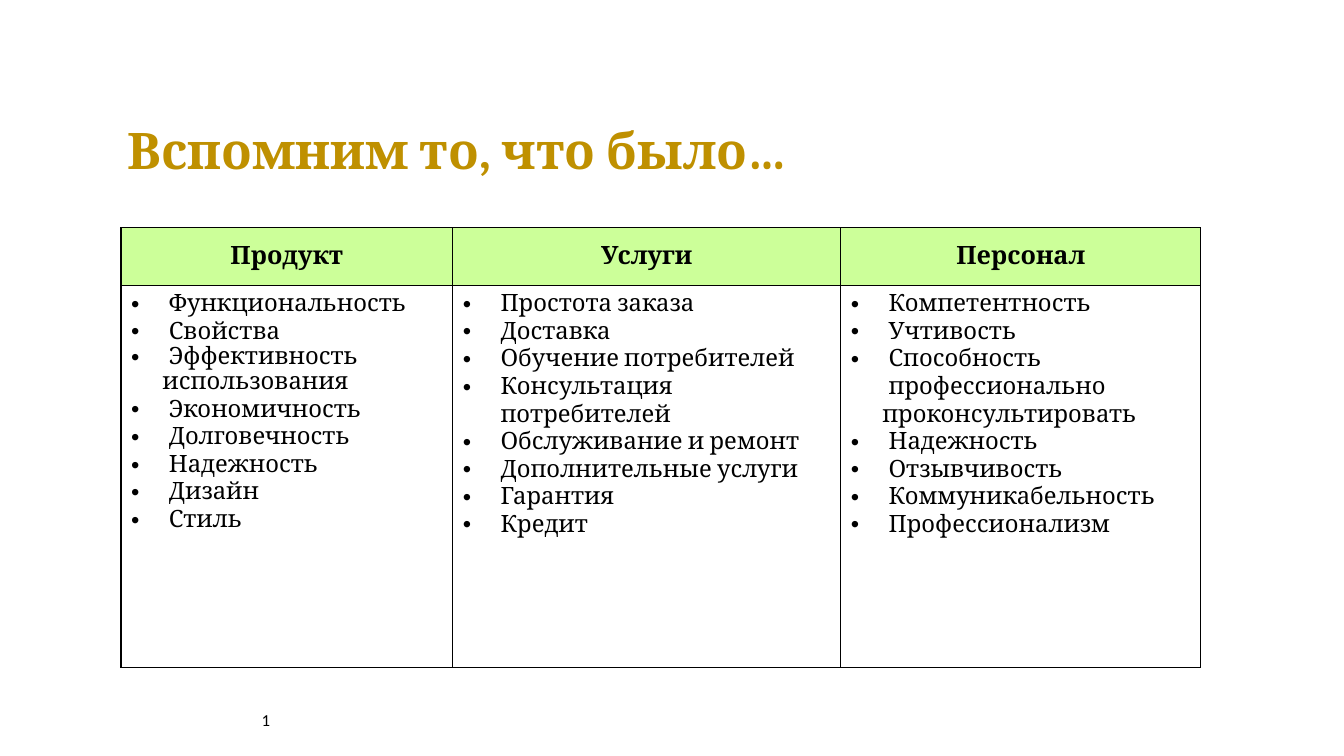
import pptx
import pptx.util
import pptx.dml.color
import pptx.enum.text
import pptx.oxml
import pptx.oxml.ns
from lxml import etree

Cm, Pt = pptx.util.Cm, pptx.util.Pt
RGB = pptx.dml.color.RGBColor.from_string
ALIGN = pptx.enum.text.PP_ALIGN
ANCHOR = pptx.enum.text.MSO_ANCHOR
NS = pptx.oxml.ns.nsdecls("a")

THEME = {
    "title": {"name": "Cambria", "size": Pt(36), "bold": True, "color": "BF9000"},
    "head": {"name": "Cambria", "size": Pt(18), "bold": True, "color": "000000"},
    "item": {"name": "Cambria", "size": Pt(17), "bold": False, "color": "000000"},
    "number": {"name": "Calibri", "size": Pt(12), "bold": False, "color": "000000"},
    "head_fill": "CCFF99",
    "border": "000000",
}
INDENT, CONTINUED_INDENT = Cm(0.95), Cm(0.79)
TIGHT = Pt(18)

# Each column: heading, width in cm, items; a nested tuple is one item on two lines.
COLUMNS = [
    ("Продукт", 8.36, [
        "Функциональность", "Свойства", ("Эффективность", "использования"),
        "Экономичность", "Долговечность", "Надежность", "Дизайн", "Стиль"]),
    ("Услуги", 9.78, [
        "Простота заказа", "Доставка", "Обучение потребителей",
        "Консультация потребителей", "Обслуживание и ремонт",
        "Дополнительные услуги", "Гарантия", "Кредит"]),
    ("Персонал", 9.07, [
        "Компетентность", "Учтивость",
        ("Способность профессионально", "проконсультировать"),
        "Надежность", "Отзывчивость", "Коммуникабельность", "Профессионализм"]),
]


def set_font(font, style):
    for key, value in THEME[style].items():
        if key == "color":
            font.color.rgb = RGB(value)
        else:
            setattr(font, key, value)


def add_borders(cell):
    tcPr = cell._tc.get_or_add_tcPr()
    for i, side in enumerate(("lnL", "lnR", "lnT", "lnB")):
        tcPr.insert(i, pptx.oxml.parse_xml(
            f'<a:{side} {NS} w="12700"><a:solidFill><a:srgbClr val="{THEME["border"]}"/>'
            f'</a:solidFill></a:{side}>'))


prs = pptx.Presentation()
prs.slide_width, prs.slide_height = Cm(33.87), Cm(19.05)
s = prs.slides.add_slide(prs.slide_layouts[5])

# Title
title = s.shapes.title
title.left, title.top, title.width, title.height = Cm(2.95), Cm(1.83), Cm(22.66), Cm(2.82)
tf = title.text_frame
tf.text = "Вспомним то, что было…"
tf.vertical_anchor = ANCHOR.BOTTOM
tf.auto_size = pptx.enum.text.MSO_AUTO_SIZE.NONE
p = tf.paragraphs[0]
p.alignment = ALIGN.LEFT
set_font(p.runs[0].font, "title")

# Table
width = sum(column[1] for column in COLUMNS)
table = s.shapes.add_table(2, len(COLUMNS), Cm(3.05), Cm(5.74), Cm(width), Cm(11.08)).table
table.first_row = table.horz_banding = False
table.rows[0].height, table.rows[1].height = Cm(1.45), Cm(9.63)

for c, (heading, column_width, items) in enumerate(COLUMNS):
    table.columns[c].width = Cm(column_width)
    head, body = table.cell(0, c), table.cell(1, c)

    head.text = heading
    head.vertical_anchor = ANCHOR.MIDDLE
    head.fill.solid()
    head.fill.fore_color.rgb = RGB(THEME["head_fill"])
    p = head.text_frame.paragraphs[0]
    p.alignment = ALIGN.CENTER
    set_font(p.runs[0].font, "head")

    body.fill.background()
    tf = body.text_frame
    p = tf.paragraphs[0]
    for i, item in enumerate(items):
        lines = item if isinstance(item, tuple) else (item,)
        for j, line in enumerate(lines):
            if i or j:
                p = tf.add_paragraph()
            r = p.add_run()
            r.text = line
            set_font(r.font, "item")
            p.alignment = ALIGN.JUSTIFY
            if c == 0 and len(lines) > 1:
                p.alignment = ALIGN.LEFT
                p.line_spacing = TIGHT
            pPr = p._p.get_or_add_pPr()
            if j == 0:
                pPr.set("marL", str(INDENT))
                pPr.set("indent", str(-INDENT))
                pPr.append(pptx.oxml.parse_xml(f'<a:buFont {NS} typeface="Arial"/>'))
                pPr.append(pptx.oxml.parse_xml(f'<a:buChar {NS} char="•"/>'))
            else:
                pPr.set("marL", str(CONTINUED_INDENT))
                pPr.set("indent", "0")

    add_borders(head)
    add_borders(body)

# Slide number
tf = s.shapes.add_textbox(Cm(5.79), Cm(17.25), Cm(1.27), Cm(1.27)).text_frame
tf.word_wrap = True
tf.vertical_anchor = ANCHOR.BOTTOM
p = tf.paragraphs[0]
p.alignment = ALIGN.RIGHT
r = p.add_run()
r.text = "1"
set_font(r.font, "number")
# A run becomes a live number when its element is a slide number field.
field = etree.SubElement(p._p, pptx.oxml.ns.qn("a:fld"), type="slidenum",
                         id="{B6F15528-21DE-4FAA-801E-634DDDAF4B2B}")
field.extend(list(r._r))
p._p.remove(r._r)

prs.save("out.pptx")
